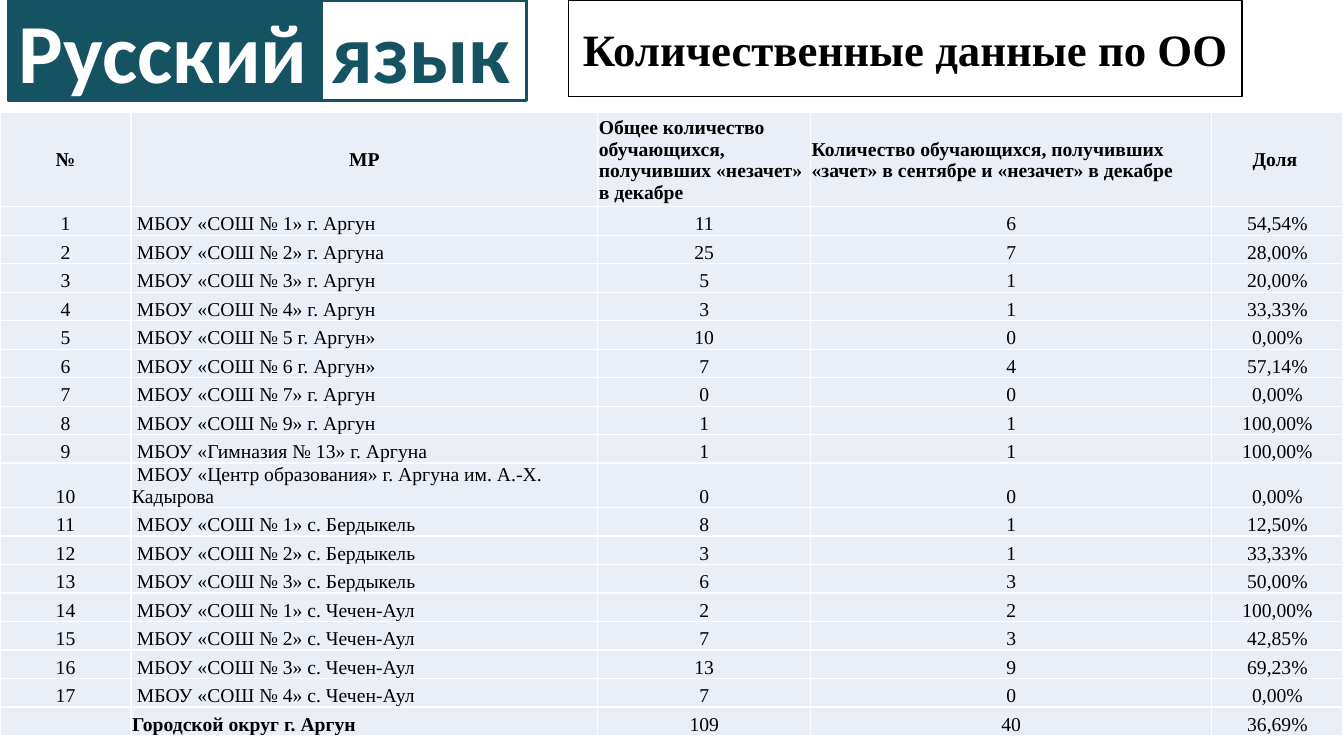
from lxml import etree
from pptx import Presentation
from pptx.dml.color import RGBColor
from pptx.enum.shapes import MSO_SHAPE
from pptx.enum.text import MSO_ANCHOR, PP_ALIGN
from pptx.oxml.ns import qn
from pptx.util import Inches, Pt

RECT = MSO_SHAPE.RECTANGLE
MIDDLE, BOTTOM = MSO_ANCHOR.MIDDLE, MSO_ANCHOR.BOTTOM
LEFT, CENTER = PP_ALIGN.LEFT, PP_ALIGN.CENTER
COLORS = {"teal": "155262", "white": "FFFFFF", "black": "000000", "pale": "EAEFF7"}
SANS, SERIF = "Calibri", "Times New Roman"

WIDTHS = [1.3, 4.63, 2.11, 3.98, 1.3]
HEAD = [
    "№",
    "МР",
    "Общее количество обучающихся, получивших «незачет» в декабре",
    "Количество обучающихся, получивших «зачет» в сентябре и «незачет» в декабре",
    "Доля ",
]
SCHOOLS = [
    ("«СОШ № 1» г. Аргун", 11, 6, "54,54%"),
    ("«СОШ № 2» г. Аргуна", 25, 7, "28,00%"),
    ("«СОШ № 3» г. Аргун", 5, 1, "20,00%"),
    ("«СОШ № 4» г. Аргун", 3, 1, "33,33%"),
    ("«СОШ № 5 г. Аргун»", 10, 0, "0,00%"),
    ("«СОШ № 6 г. Аргун»", 7, 4, "57,14%"),
    ("«СОШ № 7» г. Аргун", 0, 0, "0,00%"),
    ("«СОШ № 9» г. Аргун", 1, 1, "100,00%"),
    ("«Гимназия № 13» г. Аргуна", 1, 1, "100,00%"),
    ("«Центр образования» г. Аргуна им. А.-Х. Кадырова", 0, 0, "0,00%"),
    ("«СОШ № 1» с. Бердыкель", 8, 1, "12,50%"),
    ("«СОШ № 2» с. Бердыкель", 3, 1, "33,33%"),
    ("«СОШ № 3» с. Бердыкель", 6, 3, "50,00%"),
    ("«СОШ № 1» с. Чечен-Аул", 2, 2, "100,00%"),
    ("«СОШ № 2» с. Чечен-Аул", 7, 3, "42,85%"),
    ("«СОШ № 3» с. Чечен-Аул", 13, 9, "69,23%"),
    ("«СОШ № 4» с. Чечен-Аул", 7, 0, "0,00%"),
]
TOTAL = ["", "Городской округ г. Аргун", 109, 40, "36,69%"]


class Deck:
    def __init__(self, slide):
        self.slide = slide

    def color(self, name):
        return RGBColor.from_string(COLORS[name])

    def paint(self, fill, name):
        fill.solid()
        fill.fore_color.rgb = self.color(name)

    def label(self, frame, text, size, font, color, bold, align):
        frame.text = text
        para = frame.paragraphs[0]
        para.alignment = align
        for run in para.runs:
            run.font.size = Pt(size)
            run.font.name = font
            run.font.bold = bold
            run.font.color.rgb = self.color(color)
        if not text:
            para._p.get_or_add_endParaRPr().set("sz", str(size * 100))

    def box(self, text, left, width, height, fill, line, weight, size, font, color, align):
        shape = self.slide.shapes.add_shape(
            RECT, Inches(left), 0, Inches(width), Inches(height))
        shape.shadow.inherit = False
        if fill:
            self.paint(shape.fill, fill)
        else:
            shape.fill.background()
        shape.line.color.rgb = self.color(line)
        shape.line.width = Pt(weight)
        frame = shape.text_frame
        frame.word_wrap = True
        frame.vertical_anchor = MIDDLE
        self.label(frame, text, size, font, color, True, align)

    def border(self, cell):
        props = cell._tc.get_or_add_tcPr()
        for spot, side in enumerate(("a:lnL", "a:lnR", "a:lnT", "a:lnB")):
            line = etree.Element(qn(side), w=str(Pt(1)))
            fill = etree.SubElement(line, qn("a:solidFill"))
            etree.SubElement(fill, qn("a:srgbClr"), val=COLORS["white"])
            props.insert(spot, line)

    def cell(self, cell, text, bold, align, anchor):
        cell.margin_left = cell.margin_right = cell.margin_top = Inches(0.01)
        cell.margin_bottom = 0
        cell.vertical_anchor = anchor
        self.label(cell.text_frame, text, 14, SERIF, "black", bold, align)
        self.paint(cell.fill, "pale")
        self.border(cell)

    def table(self, rows, top, head, body):
        count = len(rows) - 1
        table = self.slide.shapes.add_table(
            len(rows), len(WIDTHS), 0, Inches(top),
            Inches(sum(WIDTHS)), Inches(head + body)).table
        table.first_row = table.horz_banding = False
        for col, width in zip(table.columns, WIDTHS):
            col.width = Inches(width)
        for r, row in enumerate(rows):
            table.rows[r].height = Inches(body / count if r else head)
            for c, value in enumerate(row):
                bold = r == 0 or (r == count and c == 1)
                left = c in (2, 3) if r == 0 else c == 1
                self.cell(table.cell(r, c), str(value), bold,
                          LEFT if left else CENTER, BOTTOM if r else MIDDLE)


def main():
    prs = Presentation()
    prs.slide_width, prs.slide_height = Inches(13.33), Inches(7.5)
    deck = Deck(prs.slides.add_slide(prs.slide_layouts[6]))
    deck.box("Русский", 0.09, 3.1, 1, "teal", "teal", 2.25, 60, SANS, "white", LEFT)
    deck.box("язык", 3.19, 2.03, 1, None, "teal", 2.25, 60, SANS, "teal", LEFT)
    deck.box("Количественные данные по ОО", 5.64, 6.68, 0.96,
             "white", "black", 1, 32, SERIF, "black", CENTER)
    body = [[num, f" МБОУ {name}", *data]
            for num, (name, *data) in enumerate(SCHOOLS, 1)]
    deck.table([HEAD, *body, TOTAL], 1.12, 0.93, 5.09)
    prs.save("out.pptx")


if __name__ == "__main__":
    main()
